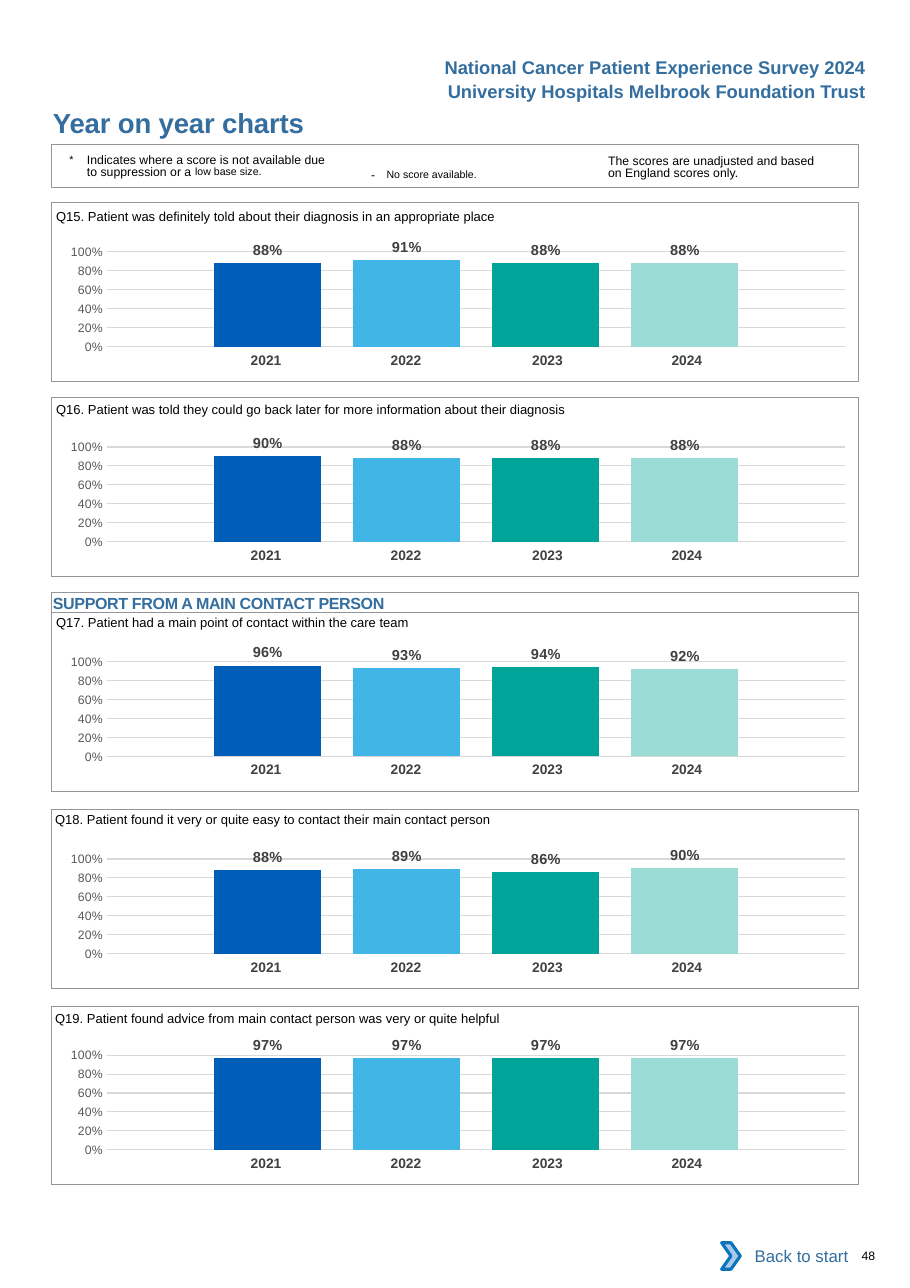
from lxml import etree
from pptx import Presentation
from pptx import util as u
from pptx.chart import data as cd
from pptx.dml.color import RGBColor
from pptx.enum import chart as ce
from pptx.enum import shapes, text

BLUE = RGBColor(0x33, 0x6E, 0x9F)
BLACK = RGBColor(0, 0, 0)
WHITE = RGBColor(0xFF, 0xFF, 0xFF)
EDGE = RGBColor(0x93, 0x95, 0x98)
YEAR = RGBColor(0x41, 0x40, 0x42)
LABEL = RGBColor(0x40, 0x40, 0x40)
TICK = RGBColor(0x59, 0x59, 0x59)
GRID = RGBColor(0xD9, 0xD9, 0xD9)
SKY = RGBColor(0xA8, 0xC7, 0xE9)
RIM = RGBColor(0x0A, 0x74, 0xBB)
BARS = [RGBColor(0x00, 0x5E, 0xB8), RGBColor(0x41, 0xB6, 0xE6),
        RGBColor(0x00, 0xA4, 0x99), RGBColor(0x9C, 0xDC, 0xD7)]

LEFT, WIDE, TALL = 0.47, 7.32, 1.62
YEARS = ["2021", "2022", "2023", "2024"]
COLS = [1.27, 1.27, 1.34, 1.27]
PADS = [0, 0, 0.04, 0.12]
PLOT = {"x": 0.08, "y": 0.145, "w": 0.915, "h": 0.666}

PANELS = [
    (1.84, 0.51, 1.8, "Q15. Patient was definitely told about their diagnosis in an appropriate place",
     [0.88, 0.91, 0.88, 0.88]),
    (3.61, 0.51, 3.55, "Q16. Patient was told they could go back later for more information about their diagnosis",
     [0.9, 0.88, 0.88, 0.88]),
    (5.56, 0.51, 5.49, "Q17. Patient had a main point of contact within the care team",
     [0.96, 0.93, 0.94, 0.92]),
    (7.35, 0.5, 7.28, "Q18. Patient found it very or quite easy to contact their main contact person",
     [0.88, 0.89, 0.86, 0.9]),
    (9.13, 0.5, 9.08, "Q19. Patient found advice from main contact person was very or quite helpful",
     [0.97, 0.97, 0.97, 0.97]),
]


def style(font, size, color, bold=False, face="Arial"):
    for key, val in {"size": u.Pt(size), "bold": bold, "name": face}.items():
        setattr(font, key, val)
    font.color.rgb = color


def write(frame, runs, size, color, bold=False, ins=(0, 0, 0, 0), align=None,
          anchor=text.MSO_ANCHOR.TOP, wrap=True, lead=None):
    sides = ("margin_left", "margin_top", "margin_right", "margin_bottom")
    form = dict(zip(sides, map(u.Inches, ins)))
    form.update(word_wrap=wrap, vertical_anchor=anchor)
    for key, val in form.items():
        setattr(frame, key, val)
    para = frame.paragraphs[0]
    para.alignment = align
    para.line_spacing = u.Pt(lead) if lead else None
    for words, size_in, extra in [(runs, size, {})] if isinstance(runs, str) else runs:
        run = para.add_run()
        run.text = words
        style(run.font, size_in, color, bold)
        for key, val in extra.items():
            run.font._element.set(key, val)
    return para


def place(at):
    return [u.Inches(n) for n in at]


def add_text(slide, at, runs, size, color=BLACK, **form):
    box = slide.shapes.add_textbox(*place(at))
    return write(box.text_frame, runs, size, color, **form)


def add_box(slide, at, kind=shapes.MSO_SHAPE.RECTANGLE, fill=None, line=EDGE, width=0.5):
    box = slide.shapes.add_shape(kind, *place(at))
    box.shadow.inherit = False
    for part, color in ((box.fill, fill), (box.line.fill, line)):
        if color is None:
            part.background()
        else:
            part.solid()
            part.fore_color.rgb = color
    if line is not None:
        box.line.width = u.Pt(width)
    return box


def add_years(slide, top):
    grid = slide.shapes.add_table(1, len(YEARS), *place((1.73, top, sum(COLS), 0.27))).table
    grid.first_row = grid.horz_banding = False
    for col, (wide, year, pad) in enumerate(zip(COLS, YEARS, PADS)):
        grid.columns[col].width = u.Inches(wide)
        cell = grid.cell(0, col)
        cell.fill.background()
        write(cell.text_frame, year, 9, YEAR, bold=True, align=text.PP_ALIGN.CENTER)
        for key, val in {"left": 0.1, "top": 0.05, "right": pad, "bottom": 0.05}.items():
            setattr(cell, "margin_" + key, u.Inches(val))


def set_plot(chart):
    area = chart._chartSpace.chart.plotArea
    space = "{http://schemas.openxmlformats.org/drawingml/2006/chart}"
    for old in area.findall(space + "layout"):
        area.remove(old)
    frame = etree.Element(space + "layout")
    area.insert(0, frame)
    hand = etree.SubElement(frame, space + "manualLayout")
    items = {"layoutTarget": "inner", "xMode": "edge", "yMode": "edge", **PLOT}
    for key, val in items.items():
        etree.SubElement(hand, space + key).set("val", str(val))


def add_bars(slide, top, vals):
    data = cd.CategoryChartData(number_format="0%")
    data.categories = ["1"]
    for num, val in enumerate(vals, 1):
        data.add_series(f"Series {num}", [val])
    kind = ce.XL_CHART_TYPE.COLUMN_CLUSTERED
    chart = slide.shapes.add_chart(kind, *place((0.39, top, WIDE, 1.29)), data).chart
    chart.has_legend = chart.has_title = False
    style(chart.font, 10, BLACK, face="Calibri")
    chart.category_axis.visible = False
    axis = chart.value_axis
    form = {"minimum_scale": 0, "maximum_scale": 1, "major_unit": 0.2,
            "has_major_gridlines": True, "major_tick_mark": ce.XL_TICK_MARK.NONE}
    for key, val in form.items():
        setattr(axis, key, val)
    axis.format.line.fill.background()
    rule = axis.major_gridlines.format.line
    rule.color.rgb = GRID
    rule.width = u.Pt(0.75)
    axis.tick_labels.number_format = "0%"
    axis.tick_labels.number_format_is_linked = False
    style(axis.tick_labels.font, 8, TICK)
    plot = chart.plots[0]
    for key, val in {"gap_width": 200, "overlap": -30, "vary_by_categories": False}.items():
        setattr(plot, key, val)
    for bar, color in zip(plot.series, BARS):
        bar.format.fill.solid()
        bar.format.fill.fore_color.rgb = color
        tags = bar.data_labels
        form = {"show_value": True, "position": ce.XL_LABEL_POSITION.OUTSIDE_END,
                "number_format": "0%", "number_format_is_linked": False}
        for key, val in form.items():
            setattr(tags, key, val)
        style(tags.font, 9.5, LABEL, True)
    set_plot(chart)


def add_panel(slide, top, left, head, words, vals):
    add_years(slide, top + 1.31)
    add_bars(slide, top + 0.26, vals)
    add_box(slide, (LEFT, top, WIDE, TALL))
    add_text(slide, (left, head, 5.6, 0.24), words, 8.5, ins=(0, 0.09, 0, 0))


def add_notes(slide):
    add_box(slide, (LEFT, 1.31, WIDE, 0.39), width=0.75)
    form = {"ins": (0, 0.03, 0, 0), "lead": 8.1}
    add_text(slide, (5.52, 1.38, 1.95, 0.27),
             "The scores are unadjusted and based on England scores only.", 8, **form)
    add_text(slide, (3.27, 1.41, 1.83, 0.24),
             [("- ", 8, {"spc": "260"}), ("No score available.", 12, {"baseline": "3000"})],
             8, ins=(0.1, 0.05, 0.1, 0.05))
    para = add_text(slide, (0.63, 1.38, 2.4, 0.27),
                    [("*\t", 12, {"baseline": "3000"}),
                     ("Indicates where a score is not available due to suppression or a ", 8, {}),
                     ("low base size.", 12, {"baseline": "7000"})], 8, **form)
    hang = u.Inches(0.16)
    for key, val in {"marL": hang, "indent": -hang}.items():
        para._p.get_or_add_pPr().set(key, str(val))


def main():
    deck = Presentation()
    deck.slide_width, deck.slide_height = u.Inches(8.26), u.Inches(11.69)
    slide = deck.slides.add_slide(deck.slide_layouts[5])
    title = slide.shapes.title
    for key, val in zip(("left", "top", "width", "height"), place((0.48, 0.96, 4.5, 0.3))):
        setattr(title, key, val)
    write(title.text_frame, [("Year on year charts", 18, {"spc": "-10"})], 18, BLUE,
          bold=True, align=text.PP_ALIGN.LEFT)
    for top, words in ((0.46, "National Cancer Patient Experience Survey 2024"),
                       (0.68, "University Hospitals Melbrook Foundation Trust")):
        add_text(slide, (3.73, top, 4.23, 0.3), words, 12, BLUE, bold=True,
                 ins=(0.1, 0.05, 0.1, 0.05), align=text.PP_ALIGN.RIGHT, wrap=False)
    add_notes(slide)
    for panel in PANELS:
        add_panel(slide, *panel)
    band = add_box(slide, (LEFT, 5.38, WIDE, 0.18))
    write(band.text_frame, [("SUPPORT FROM A MAIN CONTACT PERSON", 10.5, {"spc": "-20"})],
          10.5, BLUE, bold=True, ins=(0.01, 0.01, 0, 0), align=text.PP_ALIGN.LEFT)
    back = add_box(slide, (6.62, 11.19, 1.18, 0.42), fill=WHITE, line=None)
    write(back.text_frame, "Back to start", 11, BLUE, ins=(0.1, 0.05, 0.1, 0.05),
          align=text.PP_ALIGN.RIGHT, anchor=text.MSO_ANCHOR.MIDDLE)
    add_box(slide, (6.55, 11.28, 0.17, 0.24), shapes.MSO_SHAPE.CHEVRON, SKY, RIM, 2)
    add_text(slide, (7.82, 11.33, 0.41, 0.13), "48", 8)
    deck.save("out.pptx")


if __name__ == "__main__":
    main()
